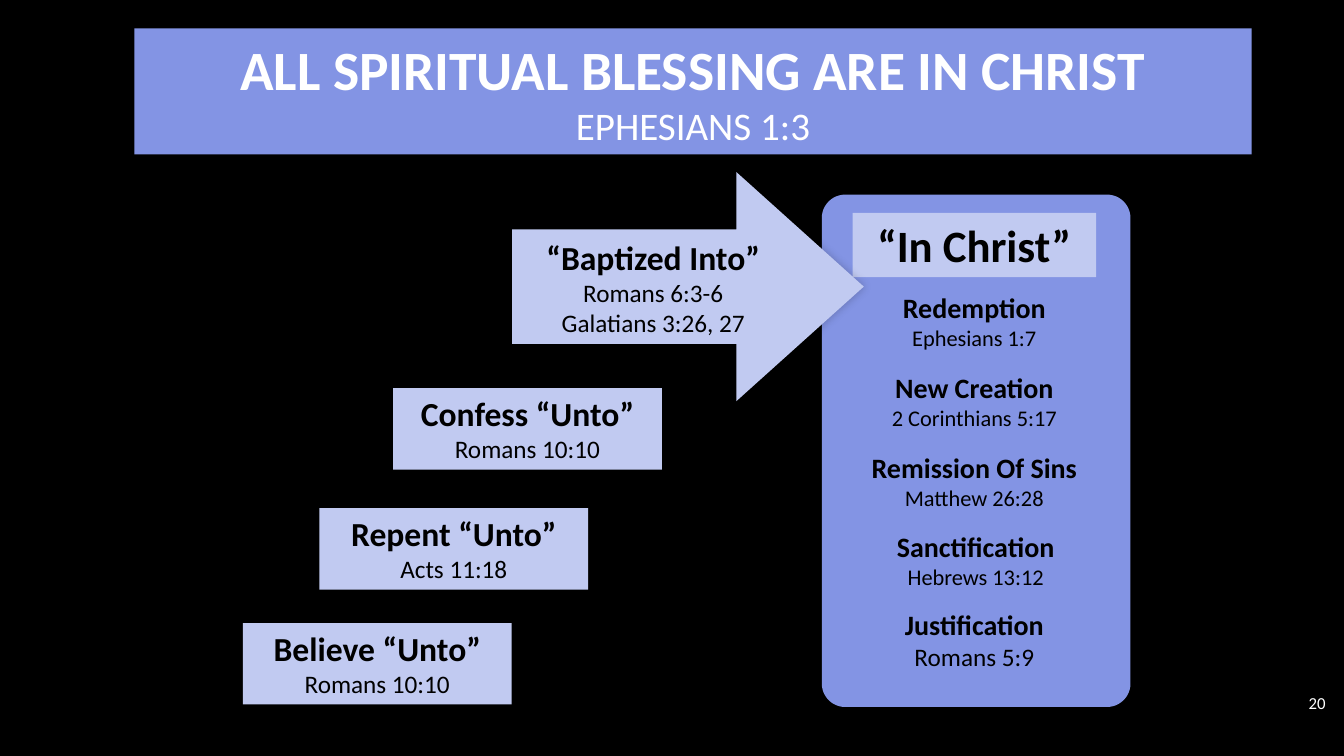
from lxml.etree import SubElement
from pptx import Presentation
from pptx.dml.color import RGBColor
from pptx.enum.shapes import MSO_SHAPE as Preset
from pptx.enum.text import MSO_ANCHOR as Anchor, MSO_AUTO_SIZE as AutoSize, PP_ALIGN as Align
from pptx.oxml.ns import qn
from pptx.util import Pt

BLACK, WHITE = "000000", "FFFFFF"
BLUE, PALE = "8394E4", "C1CAF1"

STEPS = [  # left, top, heading, verse
    (173.5, 445, "Believe “Unto”", "Romans 10:10"),
    (228.2, 363, "Repent “Unto”", "Acts 11:18"),
    (280.8, 277.2, "Confess “Unto”", "Romans 10:10"),
]
BLESSINGS = [  # left, top, heading, verse, verse size
    (609, 203.8, "Redemption", "Ephesians 1:7", 16),
    (609, 260.8, "New Creation", "2 Corinthians 5:17", 16),
    (609, 318, "Remission Of Sins", "Matthew 26:28", 16),
    (610, 375, "Sanctification", "Hebrews 13:12", 16),
    (609, 430.6, "Justification", "Romans 5:9", 18),
]


def color(hex_string):
    return RGBColor.from_string(hex_string)


def paint(shape, fill):
    shape.fill.solid()
    shape.fill.fore_color.rgb = color(fill)
    shape.line.fill.background()


def add_shadow(shape, opacity, blur, distance, direction):
    """Give the shape a black outer shadow; lengths in points, angle in degrees."""
    shape.shadow.inherit = False
    effects = shape._element.spPr.find(qn("a:effectLst"))
    shadow = SubElement(effects, qn("a:outerShdw"), blurRad=str(Pt(blur)), dist=str(Pt(distance)),
                        dir=str(direction * 60000), algn="ctr", rotWithShape="0")
    black = SubElement(shadow, qn("a:srgbClr"), val=BLACK)
    SubElement(black, qn("a:alpha"), val=str(opacity * 1000))


def place(shape, left, top, width, height):
    shape.left, shape.top, shape.width, shape.height = map(Pt, (left, top, width, height))


def add_shape(slide, preset, box, fill, shadow=True, adjustments=()):
    shape = slide.shapes.add_shape(preset, *map(Pt, box))
    paint(shape, fill)
    shape.shadow.inherit = False
    for index, value in enumerate(adjustments):
        shape.adjustments[index] = value
    if shadow:
        add_shadow(shape, 20, 6, 0, 315)
    return shape


def prepare_frame(shape, anchor=Anchor.TOP):
    frame = shape.text_frame
    frame.word_wrap = True
    frame.auto_size = AutoSize.NONE
    frame.vertical_anchor = anchor
    return frame


def add_run(paragraph, text, size, bold=False, fill=BLACK, align=Align.CENTER):
    paragraph.alignment = align
    run = paragraph.add_run()
    run.text = text
    run.font.name = "Calibri"
    run.font.size = Pt(size)
    run.font.bold = bold
    run.font.color.rgb = color(fill)


def write_heading_and_verses(shape, heading, heading_size, verses=(), verse_size=18):
    frame = prepare_frame(shape)
    add_run(frame.paragraphs[0], heading, heading_size, bold=True)
    for verse in verses:
        add_run(frame.add_paragraph(), verse, verse_size)


def add_title(slide):
    title = slide.shapes.title
    place(title, 96, 20.2, 798, 90)
    paint(title, BLUE)
    add_shadow(title, 40, 4, 3, 45)
    paragraph = prepare_frame(title, Anchor.MIDDLE).paragraphs[0]
    add_run(paragraph, "ALL SPIRITUAL BLESSING ARE IN CHRIST", 39.6, bold=True, fill=WHITE)
    paragraph.add_line_break()
    add_run(paragraph, "EPHESIANS 1:3", 27.9, fill=WHITE)


def add_blessings_panel(slide):
    add_shape(slide, Preset.ROUNDED_RECTANGLE, (587, 139, 220.5, 366), BLUE, adjustments=[0.076])
    heading = add_shape(slide, Preset.RECTANGLE, (609, 152, 174, 46), PALE, shadow=False)
    write_heading_and_verses(heading, "“In Christ”", 32)
    for left, top, name, verse, verse_size in BLESSINGS:
        box = slide.shapes.add_textbox(Pt(left), Pt(top), Pt(174), Pt(51))
        write_heading_and_verses(box, name, 20, [verse], verse_size)


def add_steps(slide):
    for left, top, name, verse in STEPS:
        step = add_shape(slide, Preset.RECTANGLE, (left, top, 192, 58.2), PALE)
        write_heading_and_verses(step, name, 24, [verse])


def add_baptism_arrow(slide):
    add_shape(slide, Preset.RIGHT_ARROW, (365.8, 123, 251.2, 163.5), PALE, adjustments=[0.5, 0.556])
    label = add_shape(slide, Preset.RECTANGLE, (365.8, 165.6, 201.6, 80), PALE, shadow=False)
    write_heading_and_verses(label, "“Baptized Into”", 24, ["Romans 6:3-6", "Galatians 3:26, 27"])


def add_slide_number(slide):
    box = slide.shapes.add_textbox(Pt(910.8), Pt(487.4), Pt(43.2), Pt(29.5))
    frame = prepare_frame(box, Anchor.MIDDLE)
    add_run(frame.paragraphs[0], "20", 12, fill=WHITE, align=Align.RIGHT)


def main():
    presentation = Presentation()
    presentation.slide_width, presentation.slide_height = Pt(960), Pt(540)
    slide = presentation.slides.add_slide(presentation.slide_layouts[5])
    slide.background.fill.solid()
    slide.background.fill.fore_color.rgb = color(BLACK)
    add_title(slide)
    add_blessings_panel(slide)
    add_steps(slide)
    add_baptism_arrow(slide)
    add_slide_number(slide)
    presentation.save("out.pptx")


if __name__ == "__main__":
    main()
